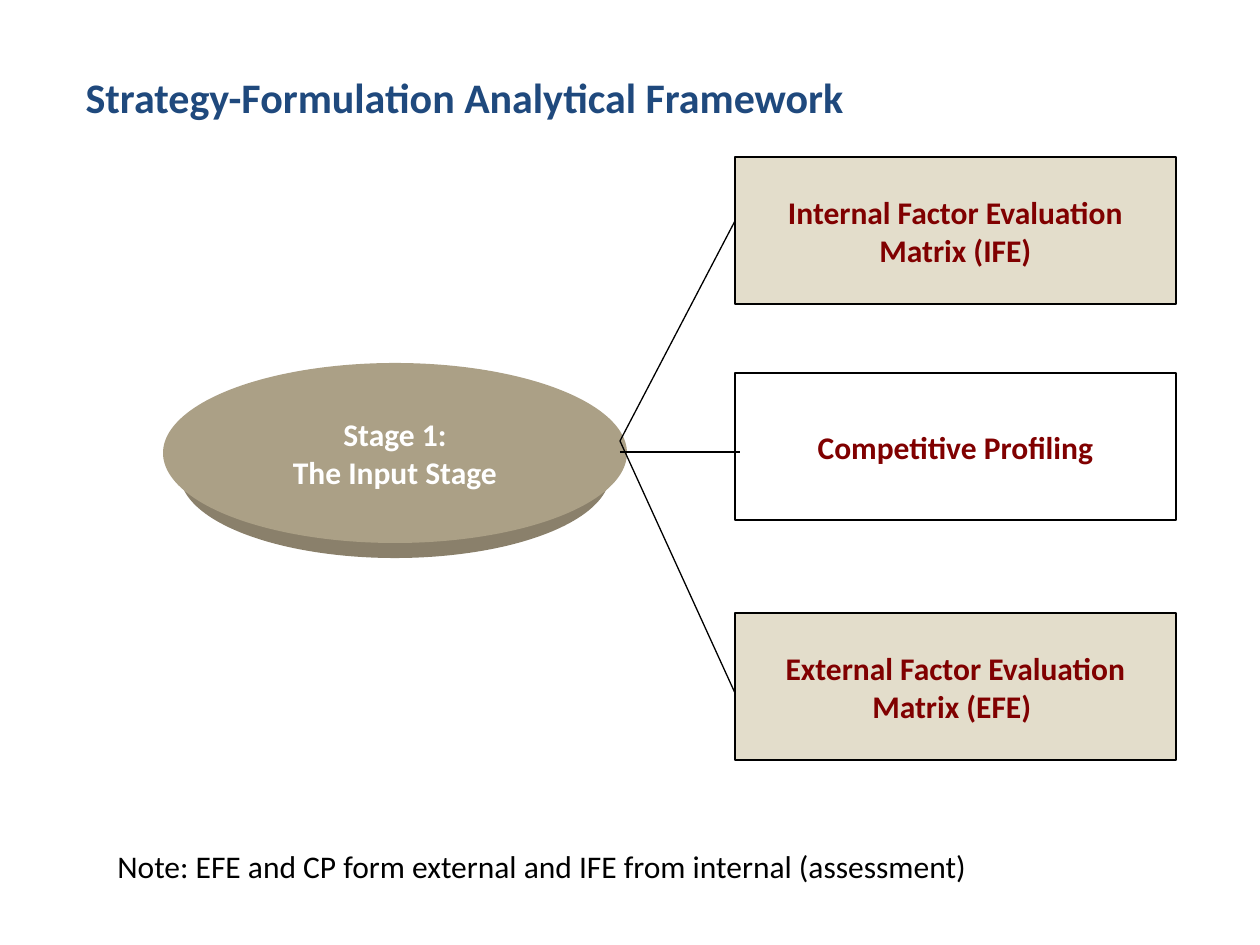
from lxml import etree
from pptx import Presentation
from pptx.dml.color import RGBColor
from pptx.enum.shapes import MSO_CONNECTOR, MSO_SHAPE
from pptx.enum.text import MSO_ANCHOR, MSO_AUTO_SIZE, PP_ALIGN
from pptx.oxml.ns import qn
from pptx.util import Emu, Pt

STRAIGHT = MSO_CONNECTOR.STRAIGHT
RECTANGLE, OVAL = MSO_SHAPE.RECTANGLE, MSO_SHAPE.OVAL
TOP, MIDDLE = MSO_ANCHOR.TOP, MSO_ANCHOR.MIDDLE
LEFT, CENTER = PP_ALIGN.LEFT, PP_ALIGN.CENTER
NO_AUTOFIT = MSO_AUTO_SIZE.NONE

EMU_PER_PX = 914400 // 126
NAVY, MAROON, BLACK, WHITE = "1F497D", "800000", "000000", "FFFFFF"
SAND, TAUPE, DARK_TAUPE = "E3DDCB", "ABA086", "8A806B"

TITLE = "Strategy-Formulation Analytical Framework"
NOTE = "Note: EFE and CP form external and IFE from internal (assessment)"
STAGE = "Stage 1:\vThe Input Stage"
# text, top, fill, start and end height of its line, end of the line
MATRICES = [
    ("Internal Factor Evaluation\vMatrix (IFE)", 157, SAND, 441, (735, 221)),
    ("Competitive Profiling", 373, WHITE, 452, (740, 452)),
    ("External Factor Evaluation\vMatrix (EFE) ", 613, SAND, 441, (735, 693)),
]
MATRIX_LEFT, MATRIX_WIDTH, MATRIX_HEIGHT = 735, 441, 147
BRANCH_LEFT = 620


def px(*lengths):
    return [Emu(length * EMU_PER_PX) for length in lengths]


def rgb(color):
    return RGBColor.from_string(color)


def write(shape, text, size=18, color=BLACK, bold=False, align=LEFT,
          anchor=TOP, wrap=True):
    frame = shape.text_frame
    frame.text = text
    frame.auto_size = NO_AUTOFIT
    frame.word_wrap = wrap
    frame.vertical_anchor = anchor
    paragraph = frame.paragraphs[0]
    paragraph.alignment = align
    for run in paragraph.runs:
        run.font.name = "Calibri"
        run.font.size = Pt(size)
        run.font.bold = bold
        run.font.color.rgb = rgb(color)


def add_block(slide, preset, box, fill, outline=None):
    block = slide.shapes.add_shape(preset, *px(*box))
    block.shadow.inherit = False
    block.fill.solid()
    block.fill.fore_color.rgb = rgb(fill)
    if outline:
        block.line.color.rgb = rgb(outline)
        block.line.width = Pt(0.75)
    else:
        block.line.fill.background()
    return block


def add_branch(slide, start, end):
    branch = slide.shapes.add_connector(STRAIGHT, *px(*start, *end))
    branch.line.color.rgb = rgb(BLACK)
    branch.line.width = Pt(0.75)
    etree.SubElement(branch._element.spPr, qn("a:effectLst"))


def main():
    deck = Presentation()
    deck.slide_width, deck.slide_height = px(1260, 945)
    slide = deck.slides.add_slide(deck.slide_layouts[5])

    title = slide.shapes.title
    title.left, title.top, title.width, title.height = px(73, 65, 840, 113)
    write(title, TITLE, size=24, color=NAVY, bold=True)

    add_block(slide, OVAL, (180, 390, 430, 168), DARK_TAUPE)
    stage = add_block(slide, OVAL, (163, 363, 464, 180), TAUPE)
    write(stage, STAGE, color=WHITE, bold=True, align=CENTER, anchor=MIDDLE,
          wrap=False)

    for text, top, fill, branch_top, branch_end in MATRICES:
        matrix = add_block(slide, RECTANGLE,
                           (MATRIX_LEFT, top, MATRIX_WIDTH, MATRIX_HEIGHT),
                           fill, BLACK)
        write(matrix, text, color=MAROON, bold=True, align=CENTER,
              anchor=MIDDLE, wrap=False)
        add_branch(slide, (BRANCH_LEFT, branch_top), branch_end)

    note = slide.shapes.add_textbox(*px(105, 841, 1062, 50))
    write(note, NOTE)
    deck.save("out.pptx")


if __name__ == "__main__":
    main()
